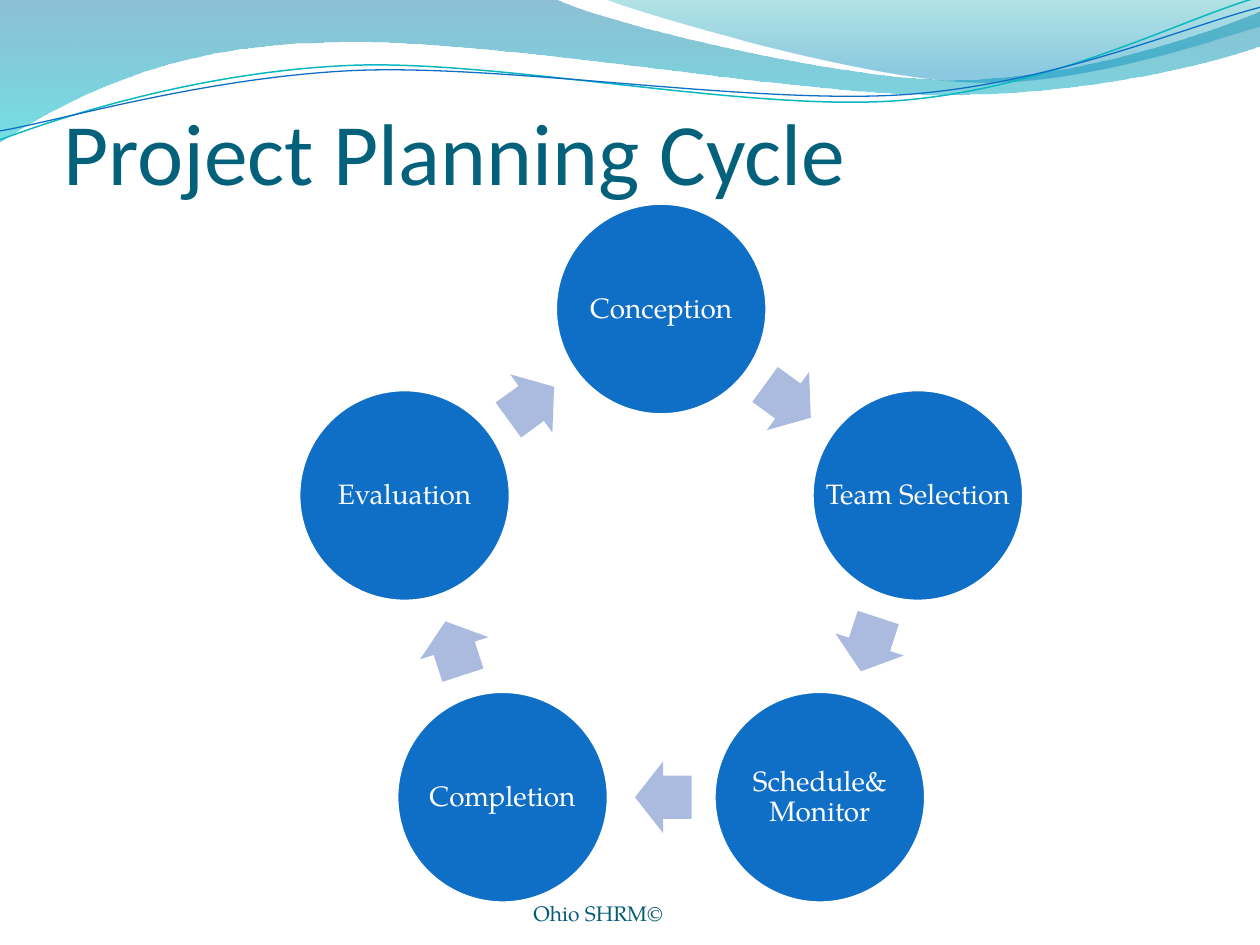
"""Build the project planning cycle slide."""
from dataclasses import dataclass
from math import cos, pi, radians, sin

from lxml import etree
from pptx import Presentation
from pptx.dml.color import RGBColor
from pptx.enum.shapes import MSO_SHAPE
from pptx.enum.text import MSO_ANCHOR, MSO_AUTO_SIZE, PP_ALIGN
from pptx.oxml.ns import qn
from pptx.util import Cm, Pt

ELLIPSE, ARROW = MSO_SHAPE.OVAL, MSO_SHAPE.RIGHT_ARROW
LEFT, CENTER = PP_ALIGN.LEFT, PP_ALIGN.CENTER
BOTTOM, MIDDLE = MSO_ANCHOR.BOTTOM, MSO_ANCHOR.MIDDLE
NO_AUTOFIT = MSO_AUTO_SIZE.NONE

WHITE = RGBColor(0xFF, 0xFF, 0xFF)
BLUE = RGBColor(0x0F, 0x6F, 0xC6)
TEAL = RGBColor(0x0A, 0xB8, 0xBF)
PALE_BLUE = RGBColor(0xAB, 0xBB, 0xDF)
TITLE_TEAL = RGBColor(0x04, 0x61, 0x7B)
FOOTER_TEAL = RGBColor(0x04, 0x5D, 0x75)
DEEP_BLUE = RGBColor(0x00, 0x74, 0xA1)
AQUA = RGBColor(0x00, 0xC6, 0xCF)
SEA_GREEN = RGBColor(0x00, 0xA1, 0xA9)
SKY = RGBColor(0x00, 0x8B, 0xBF)

HEADING_FONT, BODY_FONT = "Calibri", "TeX Gyre Pagella"
CENTER_X, CENTER_Y, RADIUS = 13.33, 11.67, 5.44
CIRCLE = 4.27
ARROW_LENGTH, ARROW_WIDTH, ARROW_SETBACK = 1.14, 1.45, 0.04


@dataclass
class Stop:
    position: float
    color: RGBColor
    opacity: int


@dataclass
class Wave:
    start: tuple
    segments: list
    stops: tuple = ()
    line: RGBColor | None = None
    weight: float = 0


@dataclass
class Stage:
    label: str
    wrap: bool = False


WAVES = [
    Wave((0, -0.03), [
        (11.18, -0.03), (12.09, 0.43, 16.87, 1.6, 19.25, 1.6),
        (21.67, 1.6, 24.33, 0.66, 25.4, 0.23), (25.43, 0.91),
        (24.97, 1.12, 22.1, 1.93, 18.95, 1.91),
        (15.8, 1.91, 9.7, 0.71, 6.53, 0.86),
        (3.28, 0.89, 1.17, 2.11, -0.03, 2.87)],
        stops=(Stop(0, DEEP_BLUE, 45), Stop(1, AQUA, 55))),
    Wave((12.17, -0.03), [
        (12.93, 0.28, 17.32, 1.57, 19.53, 1.65),
        (21.74, 1.75, 24.41, 0.81, 25.4, 0.53), (25.4, 0)],
        stops=(Stop(0, SEA_GREEN, 30), Stop(0.8, SKY, 45))),
    Wave((0, 2.82), [
        (1.22, 2.36, 4.01, 1.45, 7.04, 1.32),
        (10.03, 1.19, 15.06, 2.26, 18.11, 2.03),
        (21.16, 1.8, 23.83, 0.38, 25.35, -0.05)], line=TEAL, weight=0.85),
    Wave((0, 2.64), [
        (1.19, 2.44, 4.17, 1.55, 7.19, 1.42),
        (10.24, 1.3, 15.16, 2.11, 18.21, 1.91),
        (21.23, 1.7, 23.9, 0.53, 25.4, 0.15)], line=BLUE, weight=0.75),
]

STAGES = [Stage("Conception"), Stage("Team Selection"),
          Stage("Schedule& Monitor", wrap=True), Stage("Completion"), Stage("Evaluation")]


def bend(shape, segments: list) -> None:
    """Join the three lines of each curved segment into one Bézier curve."""
    sides = iter(list(shape._element.iter(qn("a:lnTo"))))
    for segment in segments:
        side = next(sides)
        if len(segment) == 2:
            continue
        side.tag = qn("a:cubicBezTo")
        for _ in range(2):
            extra = next(sides)
            side.append(extra[0])
            extra.getparent().remove(extra)


def draw_wave(shapes, wave: Wave) -> None:
    """Draw a gradient band or a thin curved line."""
    points = [(Cm(x), Cm(y)) for segment in wave.segments
              for x, y in zip(segment[::2], segment[1::2])]
    builder = shapes.build_freeform(Cm(wave.start[0]), Cm(wave.start[1]))
    builder.add_line_segments(points, close=bool(wave.stops))
    band = builder.convert_to_shape()
    bend(band, wave.segments)
    band.shadow.inherit = False
    if not wave.stops:
        band.fill.background()
        band.line.color.rgb = wave.line
        band.line.width = Pt(wave.weight)
        return
    band.line.fill.background()
    band.fill.gradient()
    band.fill.gradient_angle = 270
    for stop, wanted in zip(band.fill.gradient_stops, wave.stops):
        stop.position = wanted.position
        stop.color.rgb = wanted.color
    colors = band._element.spPr.find(qn("a:gradFill")).iter(qn("a:srgbClr"))
    for color, wanted in zip(colors, wave.stops):
        etree.SubElement(color, qn("a:alpha"), val=str(wanted.opacity * 1000))


def write(shape, text: str, *, size: float, color: RGBColor, font: str = BODY_FONT,
          align=CENTER, anchor=BOTTOM, margin: float = 0, spacing: float = 1,
          wrap: bool = True) -> None:
    """Put formatted text in a shape."""
    frame = shape.text_frame
    frame.text = text
    frame.auto_size = NO_AUTOFIT
    frame.word_wrap = wrap
    frame.vertical_anchor = anchor
    frame.margin_left = frame.margin_right = Cm(margin)
    frame.margin_top = frame.margin_bottom = Cm(margin)
    paragraph = frame.paragraphs[0]
    paragraph.alignment = align
    paragraph.line_spacing = spacing
    paragraph.font.name = font
    paragraph.font.size = Pt(size)
    paragraph.font.color.rgb = color


def add_centered(shapes, kind, x: float, y: float, width: float, height: float,
                 color: RGBColor):
    """Add a filled preset shape around a center point."""
    shape = shapes.add_shape(kind, Cm(x - width / 2), Cm(y - height / 2),
                             Cm(width), Cm(height))
    shape.shadow.inherit = False
    shape.fill.solid()
    shape.fill.fore_color.rgb = color
    return shape


def draw_cycle(shapes, stages: list[Stage]) -> None:
    """Draw the stages clockwise on a ring, each followed by an arrow."""
    turn = 360 / len(stages)
    for index, stage in enumerate(stages):
        angle = radians(index * turn)
        circle = add_centered(shapes, ELLIPSE, CENTER_X + RADIUS * sin(angle),
                              CENTER_Y - RADIUS * cos(angle), CIRCLE, CIRCLE, BLUE)
        circle.line.color.rgb = WHITE
        circle.line.width = Pt(2)
        write(circle, stage.label, size=16, color=WHITE, anchor=MIDDLE,
              margin=0.05, spacing=0.9, wrap=stage.wrap)

        heading = radians((index + 0.5) * turn)
        reach = RADIUS * cos(pi / len(stages))
        arrow = add_centered(
            shapes, ARROW,
            CENTER_X + reach * sin(heading) - ARROW_SETBACK * cos(heading),
            CENTER_Y - reach * cos(heading) - ARROW_SETBACK * sin(heading),
            ARROW_LENGTH, ARROW_WIDTH, PALE_BLUE)
        arrow.line.fill.background()
        arrow.adjustments[0] = 0.6
        arrow.adjustments[1] = 0.5
        arrow.rotation = (index + 0.5) * turn


def main() -> None:
    """Assemble and save the slide."""
    deck = Presentation()
    deck.slide_width, deck.slide_height = Cm(25.4), Cm(19.05)
    slide = deck.slides.add_slide(deck.slide_layouts[5])
    for wave in WAVES:
        draw_wave(slide.shapes, wave)
    title = slide.shapes.title
    title.left, title.top, title.width, title.height = Cm(1.27), Cm(0.91), Cm(22.86), Cm(3.18)
    write(title, "Project Planning Cycle", size=50, color=TITLE_TEAL,
          font=HEADING_FONT, align=LEFT)
    footer = slide.shapes.add_textbox(Cm(7.4), Cm(17.65), Cm(9.32), Cm(1.02))
    write(footer, "Ohio SHRM©", size=12, color=FOOTER_TEAL)
    draw_cycle(slide.shapes, STAGES)
    deck.save("out.pptx")


if __name__ == "__main__":
    main()
